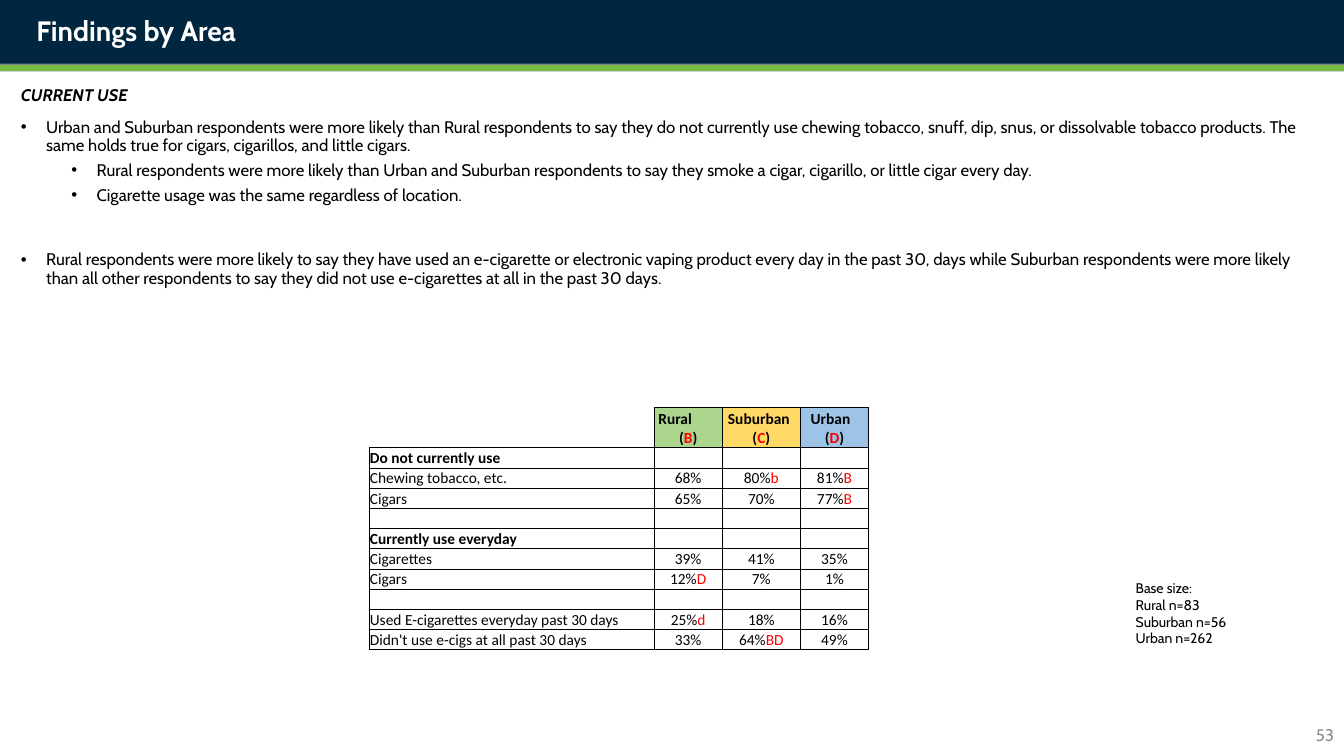
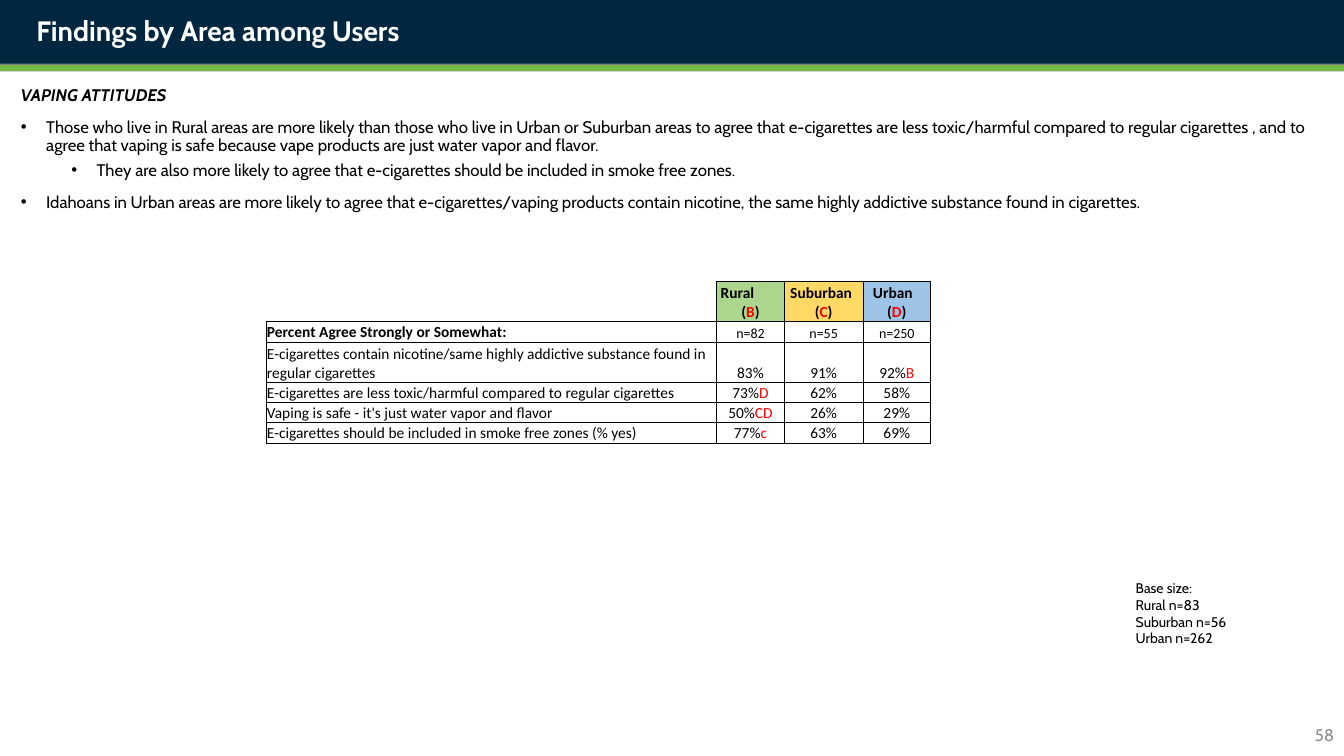
from lxml import etree
from pptx import Presentation
from pptx.dml import color
from pptx.enum import shapes, text
from pptx.oxml import ns
from pptx.util import Pt

SLIDE_W, SLIDE_H = 960, 540
NAVY, GREEN, GREY, PAGE_GREY = "00273F", "75BA43", "808080", "8C8C8C"
BLACK, WHITE, RED = "000000", "FFFFFF", "FF0000"
CENTER, RIGHT = text.PP_ALIGN.CENTER, text.PP_ALIGN.RIGHT

TITLE = {"name": "Cabin", "size": Pt(20), "bold": True}
BODY = {"name": "Cabin", "size": Pt(12)}
TOPIC = BODY | {"bold": True, "italic": True}
BASE = {"name": "Cabin", "size": Pt(10)}
CELL = {"name": "Calibri", "size": Pt(11)}
COUNT = CELL | {"size": Pt(10)}
HEADING = CELL | {"bold": True}

ROW_H = 14.45
AREA_WIDTHS = [48.2, 56.3, 48.2]
# name, indent of the name, letter, fill
AREAS = [("Rural", 2.1, "B", "ACD68E"),
         ("Suburban", 3.6, "C", "FFD966"),
         ("Urban", 6.4, "D", "9DC3E6")]
BASE_SIZES = ["Base size:", "Rural n=83", "Suburban n=56", "Urban n=262"]

# Bullets are (level, space before, text); a bar in a cell switches to red and back.
FINDINGS = [
    {"title": "Findings by Area", "page": "53", "topic": "CURRENT USE",
     "bullets": [
         (0, 10, "Urban and Suburban respondents were more likely than Rural respondents to say "
                 "they do not currently use chewing tobacco, snuff, dip, snus, or dissolvable "
                 "tobacco products. The same holds true for cigars, cigarillos, and little cigars."),
         (1, 5, "Rural respondents were more likely than Urban and Suburban respondents to say "
                "they smoke a cigar, cigarillo, or little cigar every day."),
         (1, 5, "Cigarette usage was the same regardless of location."),
         (0, 33, "Rural respondents were more likely to say they have used an e-cigarette or "
                 "electronic vaping product every day in the past 30, days while Suburban "
                 "respondents were more likely than all other respondents to say they did not "
                 "use e-cigarettes at all in the past 30 days.")],
     "table_at": (263.5, 290.9), "label_width": 204, "tall_rows": [],
     "rows": [
         ("Do not currently use", "", "", ""),
         ("Chewing tobacco, etc.", "68%", "80%|b", "81%|B"),
         ("Cigars", "65%", "70%", "77%|B"),
         ("", "", "", ""),
         ("Currently use everyday", "", "", ""),
         ("Cigarettes", "39%", "41%", "35%"),
         ("Cigars", "12%|D", "7%", "1%"),
         ("", "", "", ""),
         ("Used E-cigarettes everyday past 30 days", "25%|d", "18%", "16%"),
         ("Didn't use e-cigs at all past 30 days", "33%", "64%|BD", "49%")]},
    {"title": "Findings by Area among Users", "page": "58", "topic": "VAPING ATTITUDES",
     "bullets": [
         (0, 10, "Those who live in Rural areas are more likely than those who live in Urban or "
                 "Suburban areas to agree that e-cigarettes are less toxic/harmful compared to "
                 "regular cigarettes , and to agree that vaping is safe because vape products "
                 "are just water vapor and flavor."),
         (1, 5, "They are also more likely to agree that e-cigarettes should be included in "
                "smoke free zones."),
         (0, 10, "Idahoans in Urban areas are more likely to agree that e-cigarettes/vaping "
                 "products contain nicotine, the same highly addictive substance found in "
                 "cigarettes.")],
     "table_at": (190, 200.9), "label_width": 322, "tall_rows": [2],
     "rows": [
         ("Percent Agree Strongly or Somewhat:", "n=82", "n=55", "n=250"),
         ("E-cigarettes contain nicotine/same highly addictive substance found in regular "
          "cigarettes", "83%", "91%", "92%|B"),
         ("E-cigarettes are less toxic/harmful compared to regular cigarettes",
          "73%|D", "62%", "58%"),
         ("Vaping is safe - it's just water vapor and flavor", "50%|CD", "26%", "29%"),
         ("E-cigarettes should be included in smoke free zones (% yes)",
          "77%|c", "63%", "69%")]},
]


def rgb(value):
    return color.RGBColor.from_string(value)


def set_all(target, values):
    for name, value in values.items():
        setattr(target, name, value)


def add_run(paragraph, words, font, ink=BLACK):
    run = paragraph.add_run()
    run.text = words
    set_all(run.font, font)
    run.font.color.rgb = rgb(ink)


def add_band(slide, height, fill):
    band = slide.shapes.add_shape(shapes.MSO_SHAPE.RECTANGLE, 0, 0, Pt(SLIDE_W), Pt(height))
    band.shadow.inherit = False
    band.fill.solid()
    band.fill.fore_color.rgb = rgb(fill)
    band.line.fill.background()


def add_rule(slide, y):
    rule = slide.shapes.add_connector(
        shapes.MSO_CONNECTOR.STRAIGHT, 0, Pt(y), Pt(SLIDE_W), Pt(y))
    rule.line.color.rgb = rgb(GREEN)
    rule.line.width = Pt(4.5)
    etree.SubElement(rule._element.spPr, ns.qn("a:effectLst"))


def add_frame(slide, left, top, width, height):
    frame = slide.shapes.add_textbox(Pt(left), Pt(top), Pt(width), Pt(height)).text_frame
    frame.word_wrap = True
    return frame


def add_lines(frame, lines, font, ink=BLACK):
    for index, line in enumerate(lines):
        paragraph = frame.add_paragraph() if index else frame.paragraphs[0]
        add_run(paragraph, line, font, ink)


def set_bullet(paragraph, level):
    properties = paragraph._p.get_or_add_pPr()
    properties.set("marL", str(Pt(18 + 36 * level)))
    properties.set("indent", str(Pt(-18)))
    etree.SubElement(properties, ns.qn("a:buFont")).set("typeface", "Arial")
    etree.SubElement(properties, ns.qn("a:buChar")).set("char", "•")


def add_findings(slide, topic, bullets):
    frame = add_frame(slide, 7.9, 58.3, 944.6, 428.4)
    add_lines(frame, [topic], TOPIC)
    frame.paragraphs[0].line_spacing = 0.9
    for level, gap, words in bullets:
        paragraph = frame.add_paragraph()
        set_bullet(paragraph, level)
        set_all(paragraph, {"level": level, "line_spacing": 0.9, "space_before": Pt(gap)})
        add_run(paragraph, words, BODY)


def set_borders(cell, drawn="LRTB"):
    properties = cell._tc.get_or_add_tcPr()
    for side in "LRTB":
        edge = etree.SubElement(properties, ns.qn(f"a:ln{side}"), w=str(Pt(0.5)))
        if side in drawn:
            fill = etree.SubElement(edge, ns.qn("a:solidFill"))
            etree.SubElement(fill, ns.qn("a:srgbClr"), val=BLACK)
        else:
            etree.SubElement(edge, ns.qn("a:noFill"))


def format_cell(cell, fill=None, drawn="LRTB"):
    set_all(cell, {"margin_left": Pt(0.7), "margin_right": Pt(0.7), "margin_top": Pt(0.7),
                   "margin_bottom": 0, "vertical_anchor": text.MSO_ANCHOR.BOTTOM})
    set_borders(cell, drawn)
    if fill:
        cell.fill.solid()
        cell.fill.fore_color.rgb = rgb(fill)
    else:
        cell.fill.background()


def write_marked(paragraph, words, font):
    """Write words split at bars, in black and red by turns; keep an empty line small."""
    if not words:
        paragraph._p.get_or_add_endParaRPr().set("sz", str(int(font["size"].pt * 100)))
        return
    for index, part in enumerate(words.split("|")):
        add_run(paragraph, part, font, RED if index % 2 else BLACK)


def fill_header(cells):
    corner, *area_cells = cells
    format_cell(corner, drawn="RB")
    write_marked(corner.text_frame.paragraphs[0], "", CELL)
    for cell, (area, indent, letter, fill) in zip(area_cells, AREAS):
        format_cell(cell, fill)
        name_line = cell.text_frame.paragraphs[0]
        name_line._p.get_or_add_pPr().set("marL", str(Pt(indent)))
        add_run(name_line, area, HEADING)
        letter_line = cell.text_frame.add_paragraph()
        letter_line.alignment = CENTER
        write_marked(letter_line, f"(|{letter}|)", HEADING)


def fill_row(cells, row):
    is_heading = not any("%" in value for value in row[1:])
    for column, (cell, words) in enumerate(zip(cells, row)):
        format_cell(cell)
        paragraph = cell.text_frame.paragraphs[0]
        font = CELL
        if column:
            paragraph.alignment = CENTER
            font = COUNT if words.startswith("n=") else CELL
        elif is_heading:
            font = HEADING
        write_marked(paragraph, words, font)


def add_area_table(slide, at, label_width, rows, tall_rows):
    widths = [label_width, *AREA_WIDTHS]
    heights = [ROW_H * (2 if index in [0, *tall_rows] else 1) for index in range(len(rows) + 1)]
    table = slide.shapes.add_table(len(heights), len(widths), Pt(at[0]), Pt(at[1]),
                                   Pt(sum(widths)), Pt(sum(heights))).table
    set_all(table, {"first_row": False, "horz_banding": False})
    for column, width in zip(table.columns, widths):
        column.width = Pt(width)
    for table_row, height in zip(table.rows, heights):
        table_row.height = Pt(height)
    header, *body = table.rows
    fill_header(header.cells)
    for table_row, row in zip(body, rows):
        fill_row(table_row.cells, row)


def add_page_number(slide, page):
    frame = add_frame(slide, 744, 510.5, 216, 28.8)
    frame.vertical_anchor = text.MSO_ANCHOR.MIDDLE
    add_lines(frame, [page], BODY, PAGE_GREY)
    frame.paragraphs[0].alignment = RIGHT


def add_finding_slide(deck, finding):
    slide = deck.slides.add_slide(deck.slide_layouts[6])
    add_band(slide, 51, GREY)
    add_band(slide, 45.5, NAVY)
    add_lines(add_frame(slide, 18.9, 5.8, 737, 31.5), [finding["title"]], TITLE, WHITE)
    add_findings(slide, finding["topic"], finding["bullets"])
    add_page_number(slide, finding["page"])
    add_rule(slide, 48.5)
    add_area_table(slide, finding["table_at"], finding["label_width"],
                   finding["rows"], finding["tall_rows"])
    add_lines(add_frame(slide, 804.2, 410.4, 96.5, 55.4), BASE_SIZES, BASE)


def main():
    deck = Presentation()
    set_all(deck, {"slide_width": Pt(SLIDE_W), "slide_height": Pt(SLIDE_H)})
    for finding in FINDINGS:
        add_finding_slide(deck, finding)
    deck.save("out.pptx")


if __name__ == "__main__":
    main()
